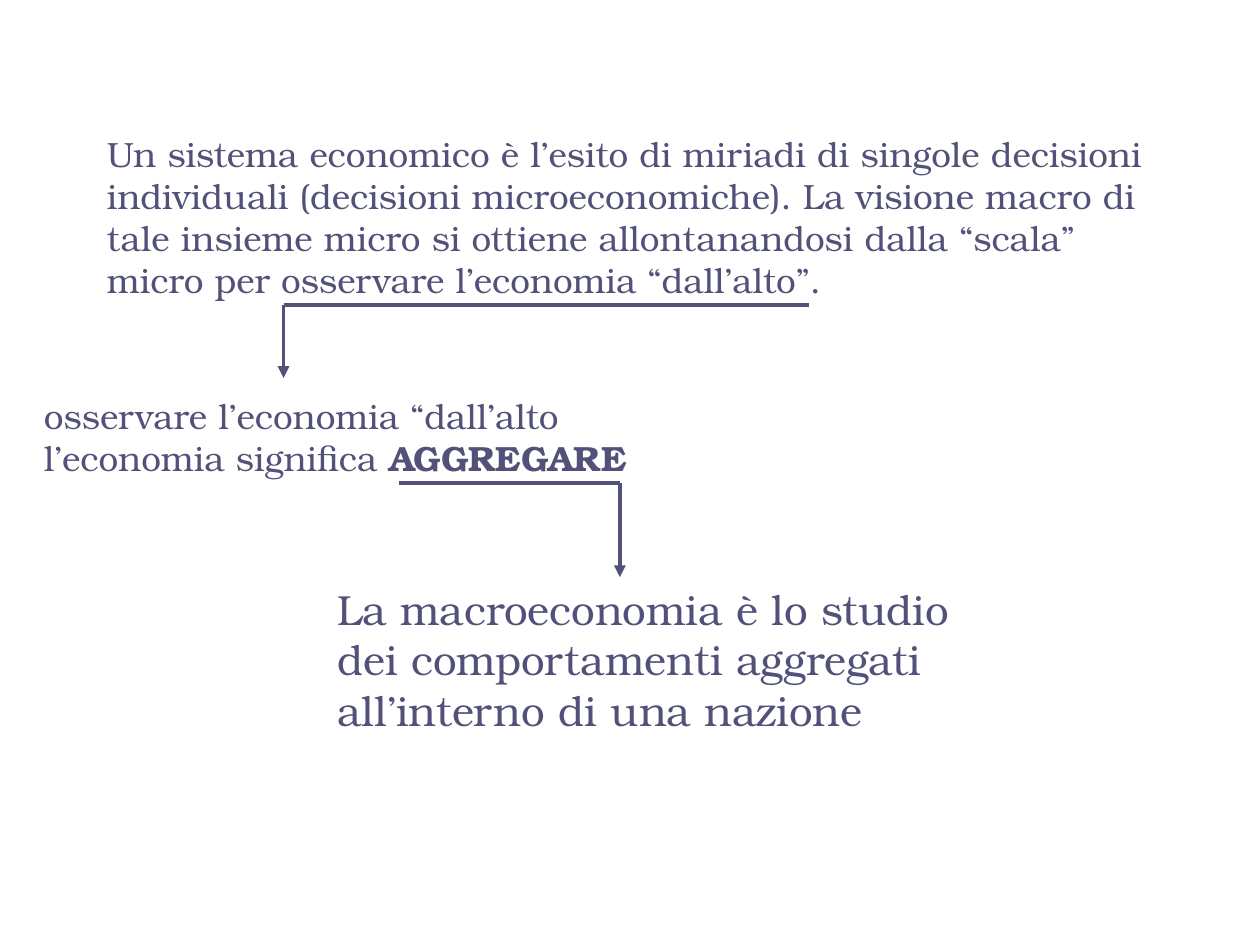
from dataclasses import dataclass

from lxml.etree import SubElement
from pptx import Presentation
from pptx.dml.color import RGBColor
from pptx.enum.shapes import MSO_CONNECTOR
from pptx.enum.text import MSO_AUTO_SIZE
from pptx.oxml.ns import qn
from pptx.util import Inches, Pt


@dataclass(frozen=True)
class Theme:
    ink: RGBColor = RGBColor(0x51, 0x51, 0x79)
    font: str = "TeX Gyre Bonum"
    body: int = 20
    conclusion: int = 24
    line: float = 2.25


THEME = Theme()


def add_span(para, text, size=THEME.body, bold=False):
    span = para.add_run()
    span.text = text
    span.font.name = THEME.font
    span.font.size = Pt(size)
    span.font.bold = bold
    span.font.color.rgb = THEME.ink


def add_text(page, text, left, top, width, height, size=THEME.body, emphasis=""):
    box = page.shapes.add_textbox(
        Inches(left), Inches(top), Inches(width), Inches(height)
    )
    frame = box.text_frame
    frame.word_wrap = True
    frame.auto_size = MSO_AUTO_SIZE.SHAPE_TO_FIT_TEXT
    para = frame.paragraphs[0]
    add_span(para, text, size=size)
    if emphasis:
        add_span(para, emphasis, size=size, bold=True)


def add_line(page, start, end, arrow=False):
    line = page.shapes.add_connector(
        MSO_CONNECTOR.STRAIGHT, *(Inches(value) for value in (*start, *end))
    )
    line.line.color.rgb = THEME.ink
    line.line.width = Pt(THEME.line)
    properties = line._element.spPr
    if arrow:
        SubElement(properties.find(qn("a:ln")), qn("a:tailEnd"), type="triangle")
    SubElement(properties, qn("a:effectLst"))


def add_underline_arrow(page, far_end, corner, bottom):
    add_line(page, corner, (far_end, corner[1]))
    add_line(page, corner, (corner[0], bottom), arrow=True)


def main():
    deck = Presentation()
    deck.slide_width = Inches(10)
    deck.slide_height = Inches(7.5)
    page = deck.slides.add_slide(deck.slide_layouts.get_by_name("Blank"))

    add_text(
        page,
        "Un sistema economico è l’esito di miriadi di singole decisioni "
        "individuali (decisioni microeconomiche). La visione macro di tale "
        "insieme micro si ottiene allontanandosi dalla “scala” micro per "
        "osservare l’economia “dall’alto”.",
        0.75, 1, 8.67, 1.43,
    )
    add_underline_arrow(page, far_end=6.42, corner=(2.25, 2.42), bottom=3)
    add_text(
        page,
        "osservare l’economia “dall’alto l’economia significa ",
        0.25, 3.08, 4.92, 0.77,
        emphasis="AGGREGARE",
    )
    add_text(
        page,
        "La macroeconomia è lo studio dei comportamenti aggregati "
        "all’interno di una nazione",
        2.58, 4.58, 5.5, 1.3,
        size=THEME.conclusion,
    )
    add_underline_arrow(page, far_end=3.17, corner=(4.92, 3.83), bottom=4.58)

    deck.save("out.pptx")


if __name__ == "__main__":
    main()
